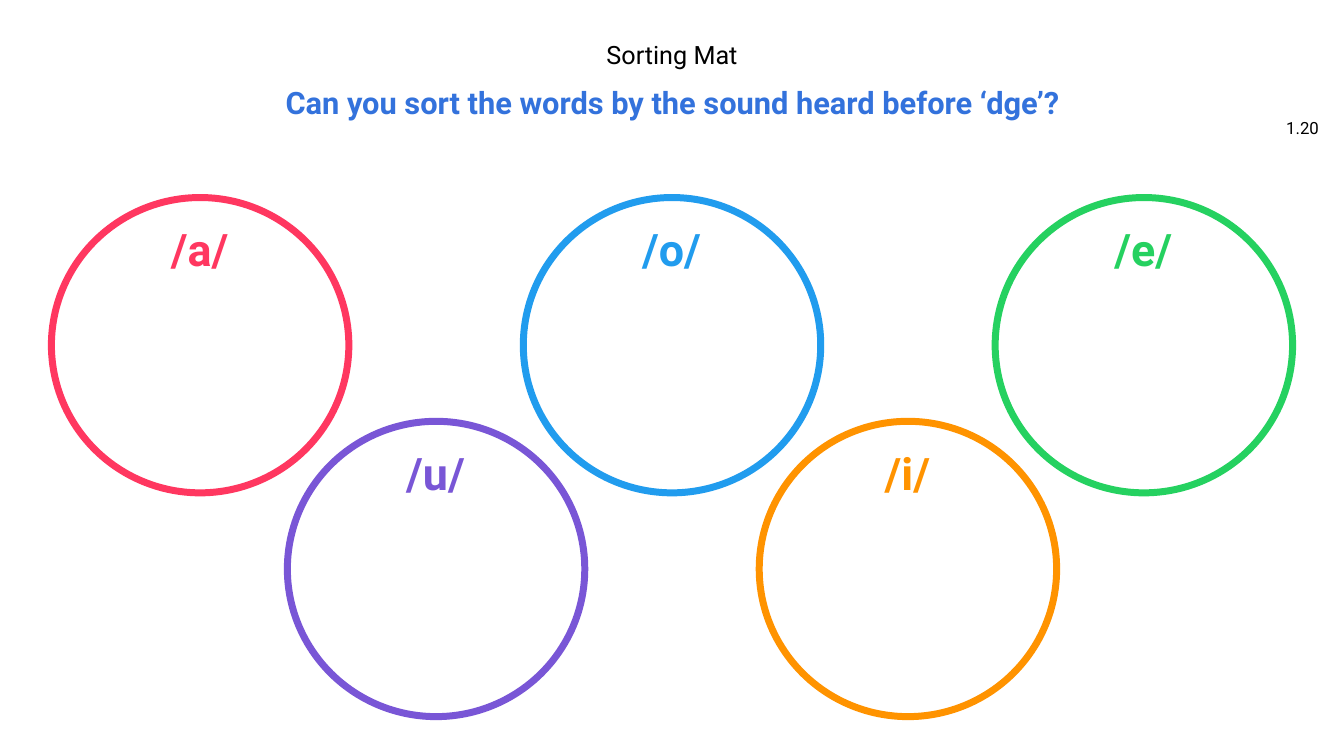
"""Build the sorting mat slide with five sound circles."""
from pptx import Presentation
from pptx import util as u
from pptx.dml.color import RGBColor
from pptx.enum import shapes, text

BLACK = RGBColor(0x00, 0x00, 0x00)
BLUE = RGBColor(0x33, 0x72, 0xDC)
RED = RGBColor(0xFF, 0x37, 0x60)
PURPLE = RGBColor(0x79, 0x56, 0xD6)
SKY = RGBColor(0x21, 0x9C, 0xEE)
ORANGE = RGBColor(0xFF, 0x93, 0x00)
GREEN = RGBColor(0x25, 0xD1, 0x60)

FONT = "Roboto"
TOP, MIDDLE = text.MSO_ANCHOR.TOP, text.MSO_ANCHOR.MIDDLE
CENTER, RIGHT = text.PP_ALIGN.CENTER, text.PP_ALIGN.RIGHT

HEADINGS = [
    ("1.20", (1255, 107, 63, 40), 12, BLACK, False, RIGHT, MIDDLE, 1),
    ("Sorting Mat", (382, 37, 569, 35), 18, BLACK, False, CENTER, TOP, 0.9),
    ("Can you sort the words by the sound heard before ‘dge’?",
     (209, 84, 916, 40), 22, BLUE, True, CENTER, MIDDLE, 0.9),
]
SOUNDS = [("/a/", RED), ("/u/", PURPLE), ("/o/", SKY), ("/i/", ORANGE), ("/e/", GREEN)]

CIRCLE_W, CIRCLE_H = 295, 293
LEFT, UPPER = 51, 196
STEP, DROP = 234, 222
LABEL_W, LABEL_H, LABEL_DY = 122, 64, 19


def px(*lengths):
    """Turn px, 100 to the inch, into EMU."""
    return [u.Emu(n * 9144) for n in lengths]


def add_text(parent, words, box, size, color, bold, align, anchor, spacing):
    """Add one line of text."""
    tf = parent.add_textbox(*px(*box)).text_frame
    tf.word_wrap = True
    tf.vertical_anchor = anchor
    p = tf.paragraphs[0]
    p.alignment = align
    p.line_spacing = spacing
    r = p.add_run()
    r.text = words
    r.font.name = FONT
    r.font.size = u.Pt(size)
    r.font.bold = bold
    r.font.color.rgb = color


def add_circle(s, x, y, sound, color):
    """Add a ring grouped with its sound."""
    group = s.shapes.add_group_shape().shapes
    sp = group.add_shape(shapes.MSO_SHAPE.OVAL, *px(x, y, CIRCLE_W, CIRCLE_H))
    sp.shadow.inherit = False
    sp.fill.background()
    sp.line.color.rgb = color
    sp.line.width = u.Pt(5)
    box = (x + (CIRCLE_W - LABEL_W) // 2, y + LABEL_DY, LABEL_W, LABEL_H)
    add_text(group, sound, box, 32, color, True, CENTER, TOP, 1)


def main():
    """Save the slide."""
    prs = Presentation()
    prs.slide_width, prs.slide_height = px(1333, 750)
    s = prs.slides.add_slide(prs.slide_layouts[6])
    for heading in HEADINGS:
        add_text(s.shapes, *heading)
    for i, (sound, color) in enumerate(SOUNDS):
        add_circle(s, LEFT + i * STEP, UPPER + i % 2 * DROP, sound, color)
    prs.save("out.pptx")


if __name__ == "__main__":
    main()
